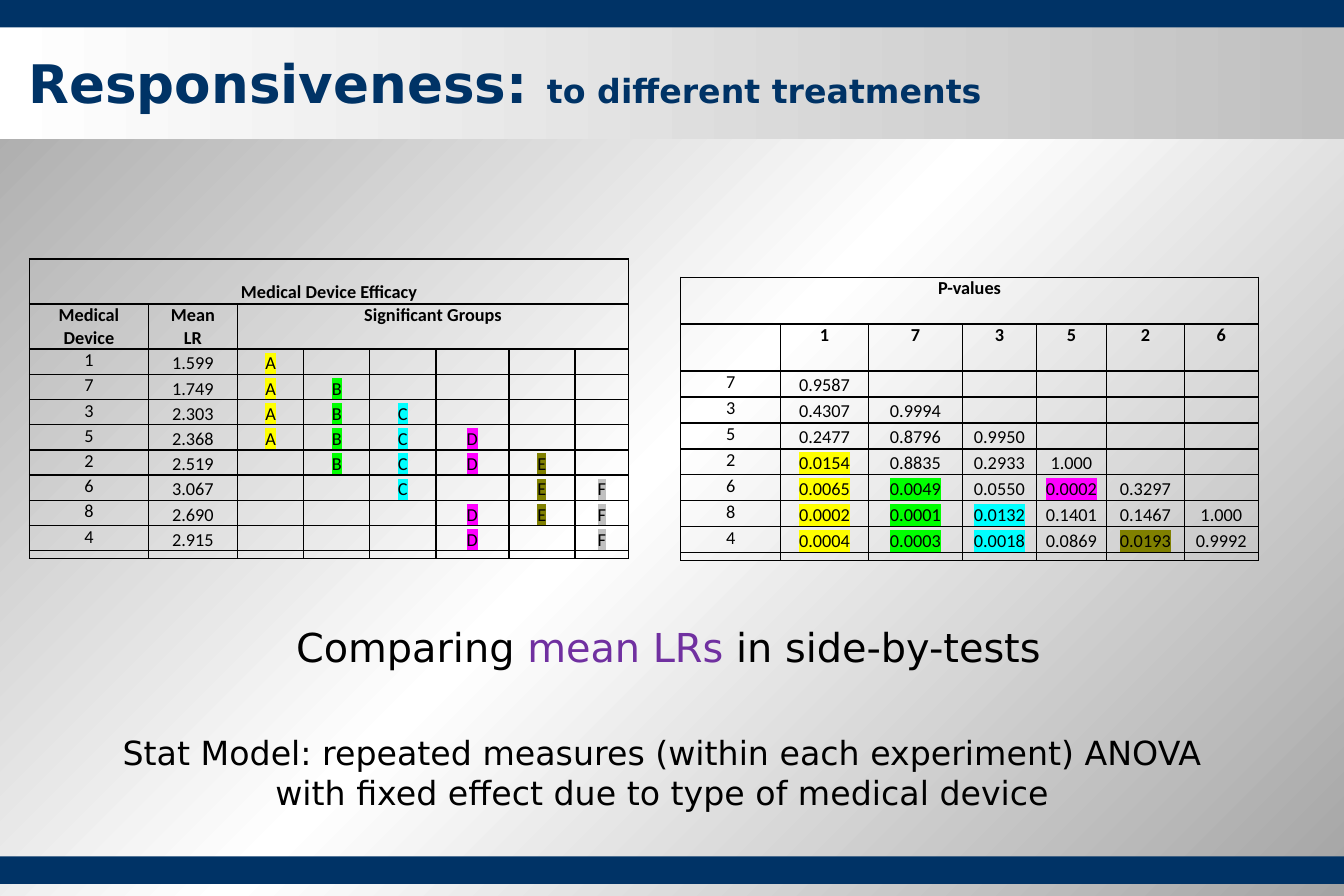
"""Build the responsiveness slide: device efficacy and p-value tables with captions."""
import copy

import pptx
import pptx.dml.color
import pptx.enum.shapes
import pptx.enum.text
import pptx.oxml
import pptx.oxml.ns
import pptx.util
from lxml import etree

Pt = pptx.util.Pt
RGB = pptx.dml.color.RGBColor
qn = pptx.oxml.ns.qn
ALIGN = pptx.enum.text.PP_ALIGN
ANCHOR = pptx.enum.text.MSO_ANCHOR

NAVY = RGB(0x00, 0x33, 0x66)
BLACK = RGB(0x00, 0x00, 0x00)
WHITE = RGB(0xFF, 0xFF, 0xFF)
SILVER = RGB(0xC0, 0xC0, 0xC0)
GRAY = RGB(0xA4, 0xA4, 0xA4)
PURPLE = RGB(0x70, 0x30, 0xA0)
YELLOW = RGB(0xFF, 0xFF, 0x00)
GREEN = RGB(0x00, 0xFF, 0x00)
CYAN = RGB(0x00, 0xFF, 0xFF)
MAGENTA = RGB(0xFF, 0x00, 0xFF)
OLIVE = RGB(0x80, 0x80, 0x00)

WIDTH, HEIGHT = 810, 540
HEADING_FONT, TABLE_FONT = "DejaVu Sans", "Calibri"

TEXTS = [
    ((10, 26.6, 788, 46), ALIGN.LEFT, True,
     [("Responsiveness: ", 32, NAVY), ("to different treatments", 20, NAVY)]),
    ((85.7, 371.5, 634.3, 36), ALIGN.CENTER, False,
     [("Comparing ", 24, BLACK), ("mean LRs ", 24, PURPLE), ("in side-by-tests", 24, BLACK)]),
    ((43.9, 437.8, 710.6, 55.4), ALIGN.CENTER, False,
     [("Stat Model: repeated measures (within each experiment) ANOVA "
       "with fixed effect due to type of medical device", 20, BLACK)]),
]

GROUP_COLORS = {"A": YELLOW, "B": GREEN, "C": CYAN, "D": MAGENTA, "E": OLIVE, "F": SILVER}
DEVICES = [
    ("1", "1.599", "A"), ("7", "1.749", "AB"), ("3", "2.303", "ABC"), ("5", "2.368", "ABCD"),
    ("2", "2.519", "BCDE"), ("6", "3.067", "CEF"), ("8", "2.690", "DEF"), ("4", "2.915", "DF"),
]
EFFICACY = [["Medical Device Efficacy"], ["Medical Device", "Mean\nLR", "Significant Groups"]] + [
    [device, mean] + [g if g in groups else "" for g in GROUP_COLORS]
    for device, mean, groups in DEVICES]

P_VALUES = [
    ["P-values"],
    ["", "1", "7", "3", "5", "2", "6"],
    ["7", "0.9587"],
    ["3", "0.4307", "0.9994"],
    ["5", "0.2477", "0.8796", "0.9950"],
    ["2", "0.0154", "0.8835", "0.2933", "1.000"],
    ["6", "0.0065", "0.0049", "0.0550", "0.0002", "0.3297"],
    ["8", "0.0002", "0.0001", "0.0132", "0.1401", "0.1467", "1.000"],
    ["4", "0.0004", "0.0003", "0.0018", "0.0869", "0.0193", "0.9992"],
]
P_COLORS = [None, YELLOW, GREEN, CYAN, MAGENTA, OLIVE, None]


def group_color(text, col):
    return GROUP_COLORS.get(text)


def significance_color(text, col):
    return P_COLORS[col] if "." in text and float(text) < 0.05 else None


def set_gradient(fill, element, colors, angle):
    fill.gradient()
    fill.gradient_angle = angle
    stops = element.find(".//" + qn("a:gsLst"))
    for _ in colors[2:]:
        stops.append(copy.deepcopy(stops[-1]))
    for i, (stop, color) in enumerate(zip(fill.gradient_stops, colors)):
        stop.color.rgb = color
        stop.position = i / (len(colors) - 1)


def add_band(s, top, height):
    sp = s.shapes.add_shape(pptx.enum.shapes.MSO_SHAPE.RECTANGLE, 0, Pt(top), Pt(WIDTH), Pt(height))
    sp.shadow.inherit = False
    sp.line.fill.background()
    sp.fill.solid()
    sp.fill.fore_color.rgb = NAVY
    return sp


def add_text(s, box, align, bold, runs):
    tf = s.shapes.add_textbox(*map(Pt, box)).text_frame
    tf.word_wrap = True
    p = tf.paragraphs[0]
    p.alignment = align
    p.font.name, p.font.bold = HEADING_FONT, bold
    for text, size, color in runs:
        r = p.add_run()
        r.text = text
        r.font.size, r.font.color.rgb = Pt(size), color


def highlight(r, color):
    mark = etree.SubElement(r.font._element, qn("a:highlight"))
    etree.SubElement(mark, qn("a:srgbClr"), val=str(color))


def add_borders(cell):
    tcPr = cell._tc.get_or_add_tcPr()
    for i, side in enumerate(("lnL", "lnR", "lnT", "lnB")):
        ln = etree.Element(qn("a:" + side), w=str(Pt(1)))
        line_fill = etree.SubElement(ln, qn("a:solidFill"))
        etree.SubElement(line_fill, qn("a:srgbClr"), val=str(BLACK))
        tcPr.insert(i, ln)


def fill_cell(cell, text, bold, spacing, color):
    cell.margin_left = cell.margin_right = Pt(5)
    cell.margin_top = cell.margin_bottom = 0
    cell.fill.background()
    add_borders(cell)
    tf = cell.text_frame
    if not text:
        etree.SubElement(tf.paragraphs[0]._p, qn("a:endParaRPr"), sz="100")
        return
    for i, line in enumerate(text.split("\n")):
        p = tf.add_paragraph() if i else tf.paragraphs[0]
        p.alignment, p.line_spacing = ALIGN.CENTER, spacing
        p.font.name, p.font.size, p.font.bold = TABLE_FONT, Pt(11), bold
        p.font.color.rgb = BLACK
        r = p.add_run()
        r.text = line
        if color:
            highlight(r, color)


def add_grid(s, left, top, widths, heights, content, merges, color_of):
    frame = s.shapes.add_table(len(heights), len(widths), Pt(left), Pt(top),
                               Pt(sum(widths)), Pt(sum(heights)))
    table = frame.table
    table.first_row = table.horz_banding = False
    for col, width in zip(table.columns, widths):
        col.width = Pt(width)
    for row, height in zip(table.rows, heights):
        row.height = Pt(height)
    for y in range(len(heights)):
        values = content[y] if y < len(content) else []
        for x in range(len(widths)):
            text = values[x] if x < len(values) else ""
            body = y > 1
            color = color_of(text, x) if body else None
            fill_cell(table.cell(y, x), text, not body, 1.15 if body and x else 1, color)
    for y, x in merges:
        table.cell(y, x).merge(table.cell(y, len(widths) - 1))
    return table


def main():
    prs = pptx.Presentation()
    prs.slide_width, prs.slide_height = Pt(WIDTH), Pt(HEIGHT)
    s = prs.slides.add_slide(prs.slide_layouts[6])
    set_gradient(s.background.fill, s._element, [GRAY, WHITE, GRAY], 315)

    add_band(s, 516.2, 16.5)
    header = add_band(s, 15.1, 68.4)
    set_gradient(header.fill, header._element, [WHITE, SILVER], 0)
    add_band(s, 0, 16.5)
    for text in TEXTS:
        add_text(s, *text)

    efficacy = add_grid(s, 17.8, 156, [71.7, 53.6, 40, 39.8, 39.8, 44, 39.8, 32.5],
                        [27.2, 27.2] + [15.2] * 8 + [4.8], EFFICACY, [(0, 0), (1, 2)], group_color)
    efficacy.cell(0, 0).vertical_anchor = ANCHOR.BOTTOM
    add_grid(s, 410.3, 167.2, [60.2, 53, 56.6, 44.6, 42.2, 47, 44.6],
             [28.2, 28.2] + [15.65] * 7 + [4.8], P_VALUES, [(0, 0)], significance_color)
    prs.save("out.pptx")


if __name__ == "__main__":
    main()
